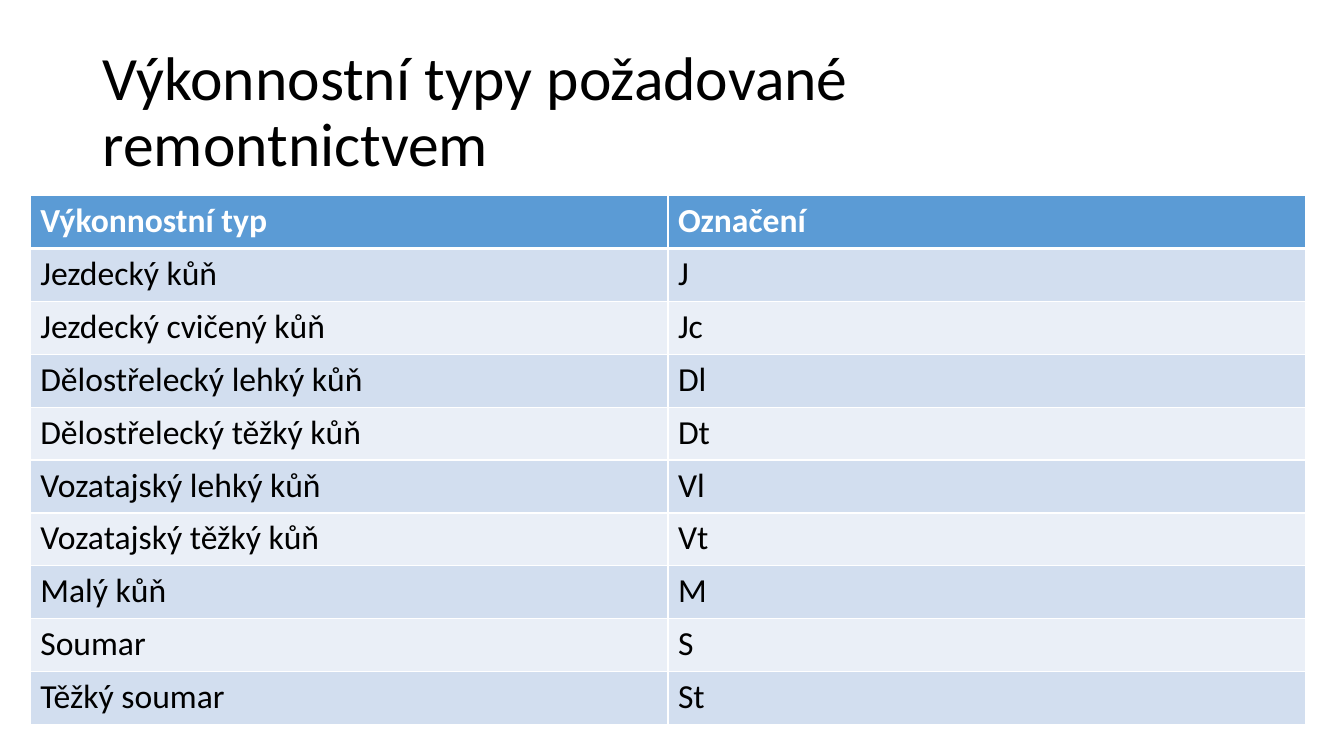
from dataclasses import dataclass

from pptx import Presentation
from pptx import util as u
from pptx.dml.color import RGBColor
from pptx.enum import text
from pptx.oxml import ns
from lxml import etree

FONT = "Calibri"
WHITE, BLACK = "FFFFFF", "000000"
ROW_HEIGHT, COLUMN_WIDTH = 0.525, 6.325


@dataclass(frozen=True)
class RowStyle:
    fill: str
    color: str
    bold: bool
    top: int
    bottom: int


HEADER = RowStyle("5B9BD5", WHITE, True, 1, 3)
FIRST = RowStyle("D2DEEF", BLACK, False, 3, 1)
ODD = RowStyle("D2DEEF", BLACK, False, 1, 1)
EVEN = RowStyle("EAEFF7", BLACK, False, 1, 1)

HORSE_TYPES = [
    ("Výkonnostní typ", "Označení"),
    ("Jezdecký kůň", "J"),
    ("Jezdecký cvičený kůň", "Jc"),
    ("Dělostřelecký lehký kůň", "Dl"),
    ("Dělostřelecký těžký kůň", "Dt"),
    ("Vozatajský lehký kůň", "Vl"),
    ("Vozatajský těžký kůň", "Vt"),
    ("Malý kůň", "M"),
    ("Soumar", "S"),
    ("Těžký soumar", "St"),
]


def rgb(value: str) -> RGBColor:
    return RGBColor.from_string(value)


def set_font(para, size: int, color: str, bold: bool = False) -> None:
    para.font.name = FONT
    para.font.size = u.Pt(size)
    para.font.bold = bold
    para.font.color.rgb = rgb(color)


def add_border(cell, side: str, points: int) -> None:
    properties = cell._tc.get_or_add_tcPr()
    line = etree.SubElement(properties, ns.qn(f"a:ln{side}"), w=str(u.Pt(points)))
    fill = etree.SubElement(line, ns.qn("a:solidFill"))
    etree.SubElement(fill, ns.qn("a:srgbClr"), val=WHITE)


def style_for(row: int) -> RowStyle:
    if row < 2:
        return (HEADER, FIRST)[row]
    return ODD if row % 2 else EVEN


def fill_cell(cell, label: str, style: RowStyle) -> None:
    # Borders precede the fill in the cell properties.
    for side, points in (("L", 1), ("R", 1), ("T", style.top), ("B", style.bottom)):
        add_border(cell, side, points)
    cell.fill.solid()
    cell.fill.fore_color.rgb = rgb(style.fill)
    cell.text = label
    set_font(cell.text_frame.paragraphs[0], 24, style.color, style.bold)


def add_title(page, title: str) -> None:
    box = page.shapes.add_textbox(u.Inches(0.92), u.Inches(0.4), u.Inches(11.5), u.Inches(1.45))
    frame = box.text_frame
    frame.word_wrap = True
    frame.margin_right = u.Inches(0.2)
    frame.vertical_anchor = text.MSO_ANCHOR.MIDDLE
    para = frame.paragraphs[0]
    para.text = title
    para.line_spacing = 0.9
    set_font(para, 44, BLACK)


def add_horse_table(page) -> None:
    rows, columns = len(HORSE_TYPES), len(HORSE_TYPES[0])
    table = page.shapes.add_table(
        rows, columns, u.Inches(0.3), u.Inches(1.94),
        u.Inches(columns * COLUMN_WIDTH), u.Inches(rows * ROW_HEIGHT),
    ).table
    for row, labels in enumerate(HORSE_TYPES):
        for column, label in enumerate(labels):
            fill_cell(table.cell(row, column), label, style_for(row))


def main() -> None:
    deck = Presentation()
    deck.slide_width, deck.slide_height = u.Inches(13.33), u.Inches(7.5)
    page = deck.slides.add_slide(deck.slide_layouts[6])
    add_title(page, "Výkonnostní typy požadované remontnictvem")
    add_horse_table(page)
    deck.save("out.pptx")


if __name__ == "__main__":
    main()
